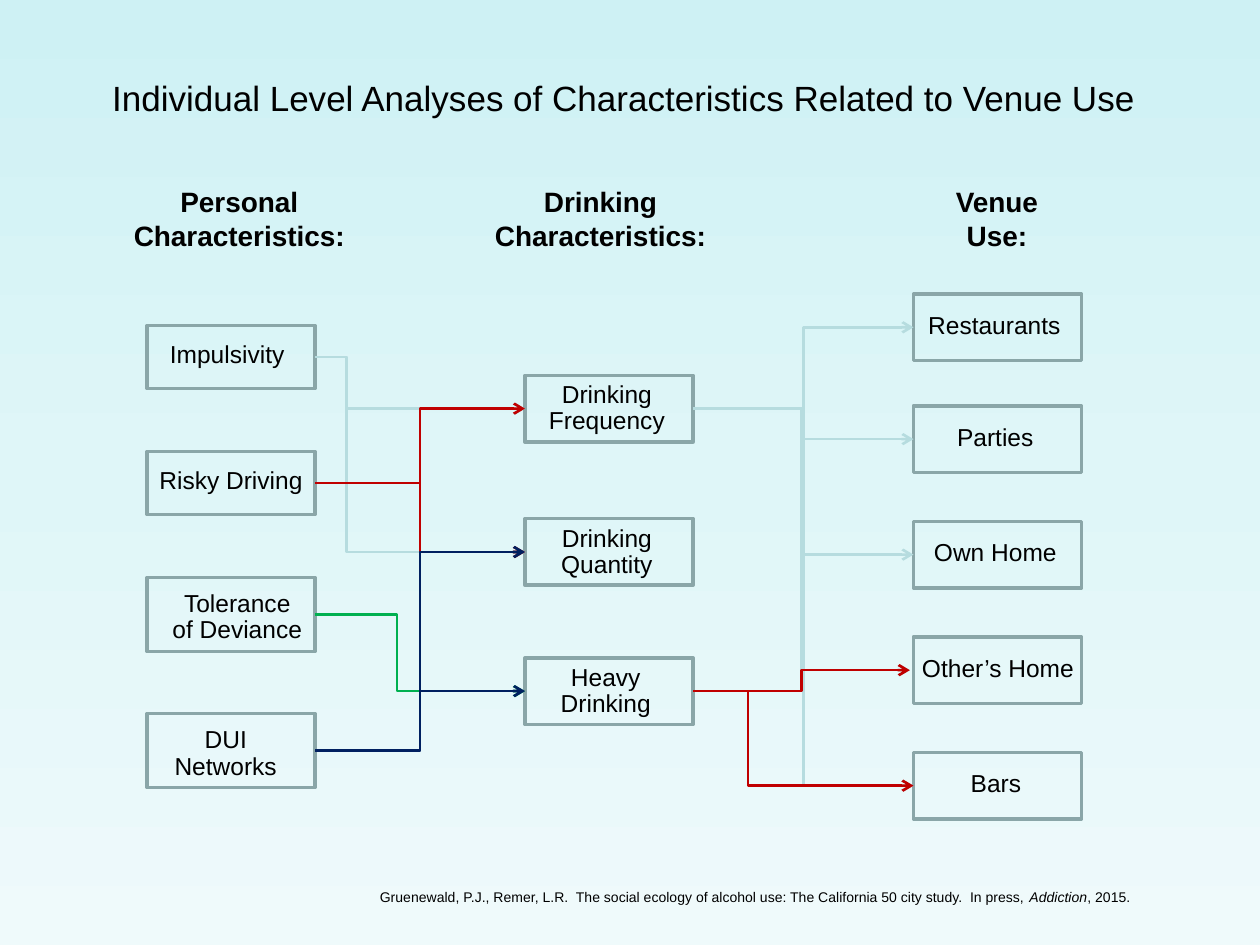
import copy

import pptx
import pptx.dml.color
import pptx.enum.shapes
import pptx.enum.text
import pptx.oxml.ns
import pptx.util

COLUMNS, ROWS = 120, 90
WIDTH, HEIGHT = pptx.util.Inches(10), pptx.util.Inches(7.5)
BOX_WIDTH = 16
PALE, RED, GREEN, NAVY = "B6DCDF", "C00000", "00B050", "002060"
CENTER = pptx.enum.text.PP_ALIGN.CENTER

NODES = [
    ("Impulsivity", 14, 31, 6, 15, 31.7, 13.4, 4.1, None),
    ("Risky Driving", 14, 43, 6, 14, 43.7, 16.2, 4.1, None),
    ("Tolerance\nof Deviance", 14, 55, 7.05, 15, 55.7, 15.2, 6.3, 15),
    ("DUI\nNetworks", 14, 67.95, 7.05, 15.4, 68.7, 12.2, 6.3, 15),
    ("Heavy\nDrinking", 50, 62.65, 6.35, 52.2, 62.75, 11, 6.3, 15),
    ("Drinking\nQuantity", 50, 49.4, 6.35, 52.2, 49.5, 11.2, 6.3, 15),
    ("Drinking\nFrequency", 50, 35.75, 6.35, 50.9, 35.8, 13.8, 6.3, 15),
    ("Restaurants", 87, 28, 6.35, 87.1, 29.2, 15.2, 3.8, 15),
    ("Parties", 87, 38.65, 6.35, 89.9, 39.9, 9.8, 3.8, 15),
    ("Own Home", 87, 49.65, 6.35, 87.7, 50.9, 14.2, 3.8, 15),
    ("Other’s Home", 87, 60.65, 6.35, 86.6, 61.9, 16.9, 3.8, 15),
    ("Bars", 87, 71.65, 6.35, 91.2, 72.9, 7.3, 3.8, 15),
]

HEADINGS = [
    ("Personal\nCharacteristics:", 11.4, 22.8),
    ("Drinking\nCharacteristics:", 45.8, 22.8),
    ("Venue\nUse:", 89.8, 10.3),
]

PATHS = [
    ("Impulsivity", "Drinking\nFrequency", PALE, 0.15),
    ("Impulsivity", "Drinking\nQuantity", PALE, 0.15),
    ("Risky Driving", "Drinking\nFrequency", RED, 0.5),
    ("Tolerance\nof Deviance", "Heavy\nDrinking", GREEN, 0.39),
    ("DUI\nNetworks", "Heavy\nDrinking", NAVY, 0.5),
    ("Risky Driving", "Drinking\nQuantity", RED, 0.5),
    ("Drinking\nFrequency", "Own Home", PALE, 0.5),
    ("Drinking\nFrequency", "Restaurants", PALE, 0.5),
    ("Drinking\nFrequency", "Parties", PALE, 0.5),
    ("Drinking\nFrequency", "Other’s Home", PALE, 0.5),
    ("Drinking\nFrequency", "Bars", PALE, 0.5),
    ("Heavy\nDrinking", "Other’s Home", RED, 0.5),
    ("Heavy\nDrinking", "Bars", RED, 0.25),
    ("DUI\nNetworks", "Drinking\nQuantity", NAVY, 0.5),
]


def rgb(value):
    return pptx.dml.color.RGBColor.from_string(value)


def across(columns):
    return round(WIDTH * columns / COLUMNS)


def down(rows):
    return round(HEIGHT * rows / ROWS)


def place(left, top, width, height):
    return across(left), down(top), across(width), down(height)


def paint_background(page, colours):
    fill = page.background.fill
    fill.gradient()
    fill.gradient_angle = 270
    stops = page.element.find(".//" + pptx.oxml.ns.qn("a:gsLst"))
    stops.append(copy.deepcopy(stops[-1]))
    for index, (stop, colour) in enumerate(zip(fill.gradient_stops, colours)):
        stop.position = index / (len(colours) - 1)
        stop.color.rgb = rgb(colour)


def add_text(page, area, paragraphs, size, align=None, spacing=None, bold=False, wrap=False):
    frame = page.shapes.add_textbox(*place(*area)).text_frame
    frame.word_wrap = wrap
    frame.auto_size = pptx.enum.text.MSO_AUTO_SIZE.SHAPE_TO_FIT_TEXT
    for index, spans in enumerate(paragraphs):
        para = frame.add_paragraph() if index else frame.paragraphs[0]
        para.alignment = align
        if spacing:
            para.line_spacing = pptx.util.Pt(spacing)
        for text, italic in spans:
            span = para.add_run()
            span.text = text
            span.font.name = "Arial"
            span.font.size = pptx.util.Pt(size)
            span.font.bold = bold
            span.font.italic = italic
            span.font.color.rgb = rgb("000000")


def plain(text):
    return [[(line, False)] for line in text.split("\n")]


def add_box(page, area):
    box = page.shapes.add_shape(pptx.enum.shapes.MSO_SHAPE.RECTANGLE, *place(*area))
    box.shadow.inherit = False
    box.fill.background()
    box.line.color.rgb = rgb("8AA6A8")
    box.line.width = pptx.util.Pt(2)
    return box


def add_path(page, source, target, colour, bend, gap):
    path = page.shapes.add_connector(
        pptx.enum.shapes.MSO_CONNECTOR.ELBOW,
        source.left + source.width,
        source.top + source.height // 2,
        target.left - gap,
        target.top + target.height // 2,
    )
    path.line.color.rgb = rgb(colour)
    path.line.width = pptx.util.Pt(1.5)
    make = pptx.oxml.ns.qn
    properties = path.element.spPr
    guides = properties.find(make("a:prstGeom")).get_or_add_avLst()
    guide = guides.makeelement(make("a:gd"), {"name": "adj1", "fmla": f"val {round(bend * 100000)}"})
    guides.append(guide)
    line = properties.find(make("a:ln"))
    line.append(line.makeelement(make("a:tailEnd"), {"type": "arrow"}))
    properties.append(properties.makeelement(make("a:effectLst"), {}))


def add_node(page, text, left, top, height, label_left, label_top, label_width, label_height, spacing):
    box = add_box(page, (left, top, BOX_WIDTH, height))
    area = label_left, label_top, label_width, label_height
    add_text(page, area, plain(text), 14, CENTER if spacing else None, spacing)
    return box


def main():
    deck = pptx.Presentation()
    deck.slide_width, deck.slide_height = WIDTH, HEIGHT
    page = deck.slides.add_slide(deck.slide_layouts[6])
    paint_background(page, ["CEF1F4", "DFF6F8", "EFFAFB"])

    title = "Individual Level Analyses of Characteristics Related to Venue Use"
    add_text(page, (9.5, 6.7, 100.6, 5.3), plain(title), 20, wrap=True)
    boxes = {node[0]: add_node(page, *node) for node in NODES}
    for text, left, width in HEADINGS:
        add_text(page, (left, 17, width, 7.7), plain(text), 16, CENTER, bold=True)
    for source, target, colour, bend in PATHS:
        gap = across(0.35) if target == "Other’s Home" else 0
        add_path(page, boxes[source], boxes[target], colour, bend, gap)

    citation = [
        ("Gruenewald, P.J., Remer, L.R.  The social ecology of alcohol use: "
         "The California 50 city study.  In press, ", False),
        ("Addiction", True),
        (", 2015.", False),
    ]
    add_text(page, (35, 84, 83, 2.9), [citation], 8, wrap=True)
    deck.save("out.pptx")


if __name__ == "__main__":
    main()
